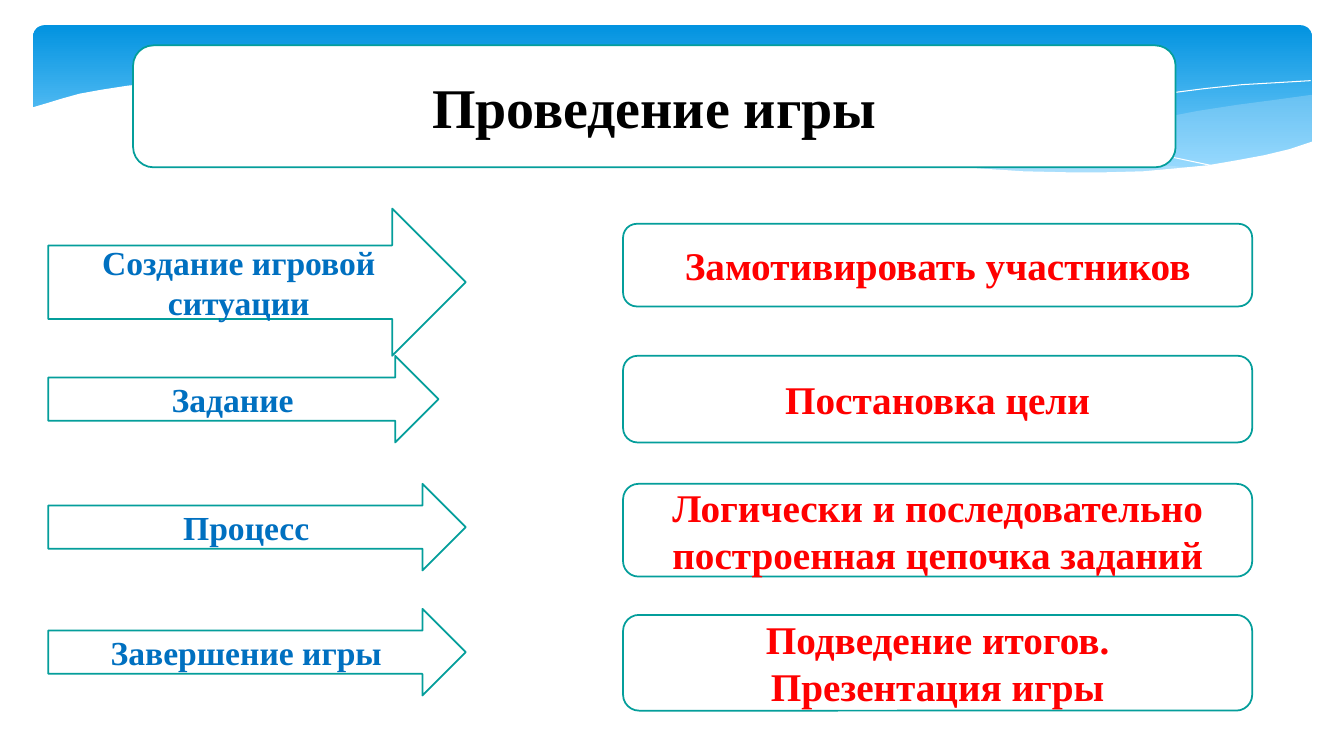
"""Build the slide on the stages of running a game."""

from dataclasses import dataclass

from lxml.etree import SubElement
from pptx import Presentation
from pptx.dml.color import RGBColor
from pptx.enum.shapes import MSO_SHAPE as Preset
from pptx.enum.text import MSO_ANCHOR as Anchor, MSO_AUTO_SIZE as AutoSize, PP_ALIGN as Align
from pptx.oxml.ns import qn
from pptx.shapes.autoshape import Shape
from pptx.slide import Slide
from pptx.text.text import TextFrame
from pptx.util import Inches, Pt

Point = tuple[int, int]


@dataclass(frozen=True)
class Theme:
    font: str = "Times New Roman"
    white: str = "FFFFFF"
    title: str = "000000"
    stage: str = "0070C0"
    goal: str = "FF0000"
    outline: str = "049E9B"
    mist: str = "C6E7FC"
    sky_top: str = "0293E0"
    sky_bottom: str = "83D3FE"
    title_size: int = 40
    stage_size: int = 24
    goal_size: int = 28
    outline_width: float = 1.25


@dataclass(frozen=True)
class Area:
    left: float
    top: float
    width: float
    height: float


@dataclass(frozen=True)
class Wave:
    points: tuple[Point, ...]
    fill: str | None = None
    opacity: int = 100


@dataclass(frozen=True)
class Step:
    stage: str
    stage_top: float
    stage_width: float
    stage_height: float
    goal: tuple[str, ...]
    goal_top: float
    goal_height: float


THEME = Theme()
UNITS_PER_INCH = 100
HEADER = Area(0.33, 0.25, 12.68, 1.56)
TITLE = Area(1.32, 0.45, 10.34, 1.21)
STAGE_LEFT = 0.48
GOAL_LEFT, GOAL_WIDTH = 6.18, 6.24

WAVES = (
    Wave(((1301, 94), (1265, 99), (1227, 104), (1188, 110), (1147, 118), (1073, 131),
          (1005, 143), (941, 152), (882, 160), (921, 164), (958, 167), (993, 169),
          (1025, 171), (1071, 172), (1113, 172), (1151, 170), (1186, 166), (1218, 162),
          (1247, 156), (1284, 147), (1301, 142)), THEME.mist, 29),
    Wave(((1190, 167), (1154, 164), (1076, 154), (989, 142), (891, 126), (839, 116),
          (798, 109), (759, 102), (721, 97), (686, 92), (652, 89), (589, 83), (532, 80),
          (482, 80), (437, 81), (382, 86), (431, 90), (483, 97), (539, 106), (599, 116),
          (706, 135), (779, 146), (846, 156), (907, 163), (963, 168), (1014, 171),
          (1061, 173), (1104, 173), (1143, 171)), THEME.mist, 40),
    Wave(((412, 90), (438, 86), (484, 83), (535, 82), (600, 82), (652, 84), (710, 88),
          (775, 94), (848, 103), (927, 114), (1014, 128), (1108, 145), (1158, 155),
          (1210, 166))),
    Wave(((818, 151), (870, 141), (927, 130), (997, 117), (1075, 104), (1155, 93),
          (1194, 88), (1232, 84), (1267, 82), (1300, 80))),
    Wave(((1303, 140), (1279, 148), (1254, 154), (1227, 159), (1198, 164), (1167, 167),
          (1134, 170), (1097, 171), (1058, 171), (1015, 170), (969, 167), (918, 162),
          (863, 156), (804, 149), (740, 139), (671, 128), (596, 114), (521, 102),
          (453, 92), (390, 85), (333, 81), (282, 78), (235, 78), (194, 79), (158, 82),
          (127, 85), (101, 89), (79, 93), (61, 98), (48, 102), (31, 107), (31, 224),
          (1303, 224)), THEME.white),
)

STEPS = (
    Step("Создание игровой ситуации", 2.07, 4.14, 1.46,
         ("Замотивировать участников",), 2.22, 0.82),
    Step("Задание", 3.53, 3.87, 0.86, ("Постановка цели",), 3.53, 0.86),
    Step("Процесс", 4.8, 4.14, 0.86,
         ("Логически и последовательно построенная цепочка заданий",), 4.8, 0.92),
    Step("Завершение игры", 6.04, 4.14, 0.86,
         ("Подведение итогов.", "Презентация игры"), 6.1, 0.95),
)


def color(code: str) -> RGBColor:
    return RGBColor.from_string(code)


def add_preset(page: Slide, preset: Preset, area: Area) -> Shape:
    shape = page.shapes.add_shape(
        preset, Inches(area.left), Inches(area.top), Inches(area.width), Inches(area.height))
    shape.shadow.inherit = False
    return shape


def add_header(page: Slide) -> None:
    header = add_preset(page, Preset.ROUNDED_RECTANGLE, HEADER)
    header.adjustments[0] = 0.071
    header.line.fill.background()
    header.fill.gradient()
    header.fill.gradient_angle = 270
    stops = ((0, THEME.sky_top), (0.9, THEME.sky_bottom))
    for stop, (position, code) in zip(header.fill.gradient_stops, stops):
        stop.position = position
        stop.color.rgb = color(code)


def add_wave(page: Slide, wave: Wave) -> None:
    start, *rest = wave.points
    builder = page.shapes.build_freeform(*start, scale=Inches(1) / UNITS_PER_INCH)
    builder.add_line_segments(rest, close=wave.fill is not None)
    shape = builder.convert_to_shape()
    shape.shadow.inherit = False
    if wave.fill is None:
        shape.fill.background()
        shape.line.color.rgb = color(THEME.white)
        shape.line.width = Pt(0)
        return
    shape.line.fill.background()
    shape.fill.solid()
    shape.fill.fore_color.rgb = color(wave.fill)
    if wave.opacity < 100:
        fill_color = shape.fill._xPr.find(qn("a:solidFill"))[0]
        SubElement(fill_color, qn("a:alpha"), val=str(wave.opacity * 1000))


def add_panel(page: Slide, preset: Preset, area: Area) -> Shape:
    panel = add_preset(page, preset, area)
    panel.fill.solid()
    panel.fill.fore_color.rgb = color(THEME.white)
    panel.line.color.rgb = color(THEME.outline)
    panel.line.width = Pt(THEME.outline_width)
    return panel


def write(frame: TextFrame, lines: tuple[str, ...], size: int, code: str) -> None:
    frame.word_wrap = True
    frame.auto_size = AutoSize.NONE
    frame.vertical_anchor = Anchor.MIDDLE
    for index, line in enumerate(lines):
        para = frame.add_paragraph() if index else frame.paragraphs[0]
        para.alignment = Align.CENTER
        span = para.add_run()
        span.text = line
        span.font.name = THEME.font
        span.font.size = Pt(size)
        span.font.bold = True
        span.font.color.rgb = color(code)


def add_title(page: Slide) -> None:
    add_panel(page, Preset.FLOWCHART_ALTERNATE_PROCESS, TITLE)
    title = page.shapes.title
    title.left, title.top = Inches(TITLE.left), Inches(TITLE.top)
    title.width, title.height = Inches(TITLE.width), Inches(TITLE.height)
    write(title.text_frame, ("Проведение игры",), THEME.title_size, THEME.title)
    title._element.getparent().append(title._element)


def add_step(page: Slide, step: Step) -> None:
    stage_area = Area(STAGE_LEFT, step.stage_top, step.stage_width, step.stage_height)
    arrow = add_panel(page, Preset.RIGHT_ARROW, stage_area)
    write(arrow.text_frame, (step.stage,), THEME.stage_size, THEME.stage)
    goal_area = Area(GOAL_LEFT, step.goal_top, GOAL_WIDTH, step.goal_height)
    box = add_panel(page, Preset.ROUNDED_RECTANGLE, goal_area)
    write(box.text_frame, step.goal, THEME.goal_size, THEME.goal)


def main() -> None:
    deck = Presentation()
    deck.slide_width, deck.slide_height = Inches(13.33), Inches(7.5)
    page = deck.slides.add_slide(deck.slide_layouts[5])
    add_header(page)
    for wave in WAVES:
        add_wave(page, wave)
    add_title(page)
    for step in STEPS:
        add_step(page, step)
    deck.save("out.pptx")


if __name__ == "__main__":
    main()
